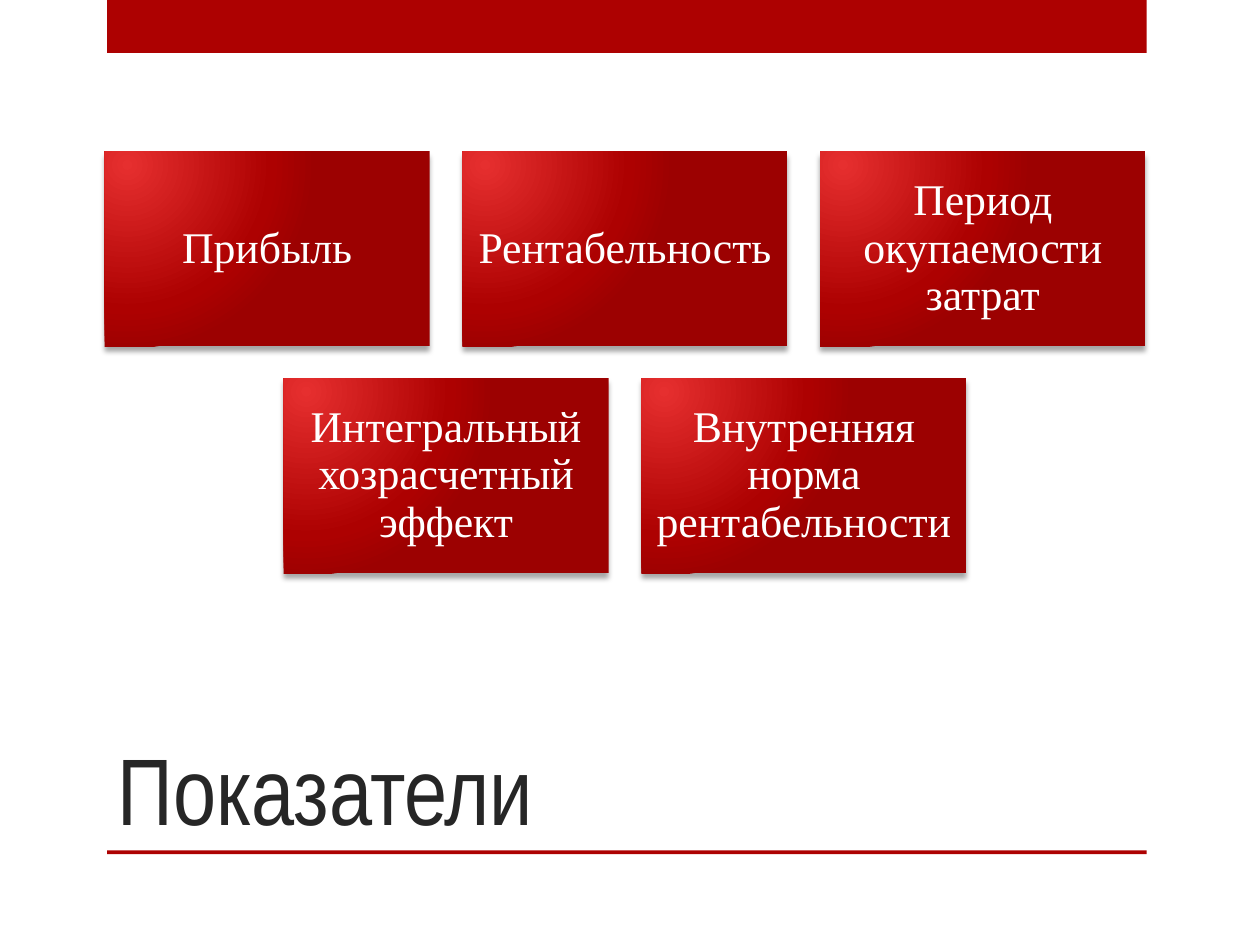
from lxml import etree
from pptx import Presentation
from pptx import util as u
from pptx.dml.color import RGBColor
from pptx.enum import shapes, text
from pptx.oxml import parse_xml
from pptx.oxml.ns import nsdecls, qn

RED = RGBColor(0xAD, 0x01, 0x01)
LIGHT_RED = RGBColor(0xE6, 0x2F, 0x2F)
DARK_RED = RGBColor(0x9C, 0x01, 0x01)
WHITE = RGBColor(0xFF, 0xFF, 0xFF)
INK = RGBColor(0x26, 0x26, 0x26)
SHADOW = RGBColor(0, 0, 0)

CARD_W, CARD_H = 2.58, 1.55
STEP_X, STEP_Y = 2.84, 1.8
CENTER_X, TOP = 4.96, 1.2
ROWS = [
    ["Прибыль", "Рентабельность", "Период окупаемости затрат"],
    ["Интегральный хозрасчетный эффект", "Внутренняя норма рентабельности"],
]


def write(frame, wording, *, font, size, color, align, anchor, spacing=1.0):
    frame.word_wrap = True
    frame.auto_size = text.MSO_AUTO_SIZE.NONE
    frame.vertical_anchor = anchor
    para = frame.paragraphs[0]
    para.alignment = align
    para.line_spacing = spacing
    span = para.add_run()
    span.text = wording
    span.font.name = font
    span.font.size = u.Pt(size)
    span.font.color.rgb = color


def style_card(card):
    """Give a card its radial gradient and soft shadow below."""
    stops = "".join(
        f'<a:gs pos="{place * 1000}"><a:srgbClr val="{color}"/></a:gs>'
        for place, color in [(0, LIGHT_RED), (76, RED), (100, DARK_RED)])
    gradient = parse_xml(
        f'<a:gradFill {nsdecls("a")} rotWithShape="1"><a:gsLst>{stops}</a:gsLst>'
        '<a:path path="circle"><a:fillToRect l="15000" t="15000" r="100000" '
        'b="100000"/></a:path></a:gradFill>')
    card.fill.background()
    card.line.fill.background()
    card.shadow.inherit = False
    props = card.fill._xPr
    props.replace(props.find(qn("a:noFill")), gradient)
    shadow = etree.SubElement(
        props.find(qn("a:effectLst")), qn("a:outerShdw"),
        blurRad=str(u.Pt(3)), dist=str(u.Pt(3)), dir="5400000", rotWithShape="0")
    color = etree.SubElement(shadow, qn("a:srgbClr"), val=str(SHADOW))
    etree.SubElement(color, qn("a:alpha"), val="35000")


deck = Presentation()
deck.slide_width, deck.slide_height = u.Inches(10), u.Inches(7.5)
page = deck.slides.add_slide(deck.slide_layouts[5])

# Top band and bottom rule
for top, height in [(0, 0.42), (6.75, 0.03)]:
    band = page.shapes.add_shape(
        shapes.MSO_SHAPE.RECTANGLE,
        u.Inches(0.85), u.Inches(top), u.Inches(8.25), u.Inches(height))
    band.fill.solid()
    band.fill.fore_color.rgb = RED
    band.line.fill.background()
    band.shadow.inherit = False

# Title
title = page.shapes.title
title.left, title.top = u.Inches(0.83), u.Inches(5)
title.width, title.height = u.Inches(7.42), u.Inches(1.75)
write(title.text_frame, "Показатели", font="Arial Narrow", size=54, color=INK,
      align=text.PP_ALIGN.LEFT, anchor=text.MSO_ANCHOR.BOTTOM)

# Indicator cards, each row centred
for row, labels in enumerate(ROWS):
    left = CENTER_X - ((len(labels) - 1) * STEP_X + CARD_W) / 2
    for column, label in enumerate(labels):
        card = page.shapes.add_shape(
            shapes.MSO_SHAPE.RECTANGLE,
            u.Inches(left + column * STEP_X), u.Inches(TOP + row * STEP_Y),
            u.Inches(CARD_W), u.Inches(CARD_H))
        style_card(card)
        frame = card.text_frame
        frame.margin_left = frame.margin_right = u.Inches(0.1)
        frame.margin_top = frame.margin_bottom = u.Inches(0.1)
        write(frame, label, font="Times New Roman", size=25, color=WHITE,
              align=text.PP_ALIGN.CENTER, anchor=text.MSO_ANCHOR.MIDDLE,
              spacing=0.9)

deck.save("out.pptx")
